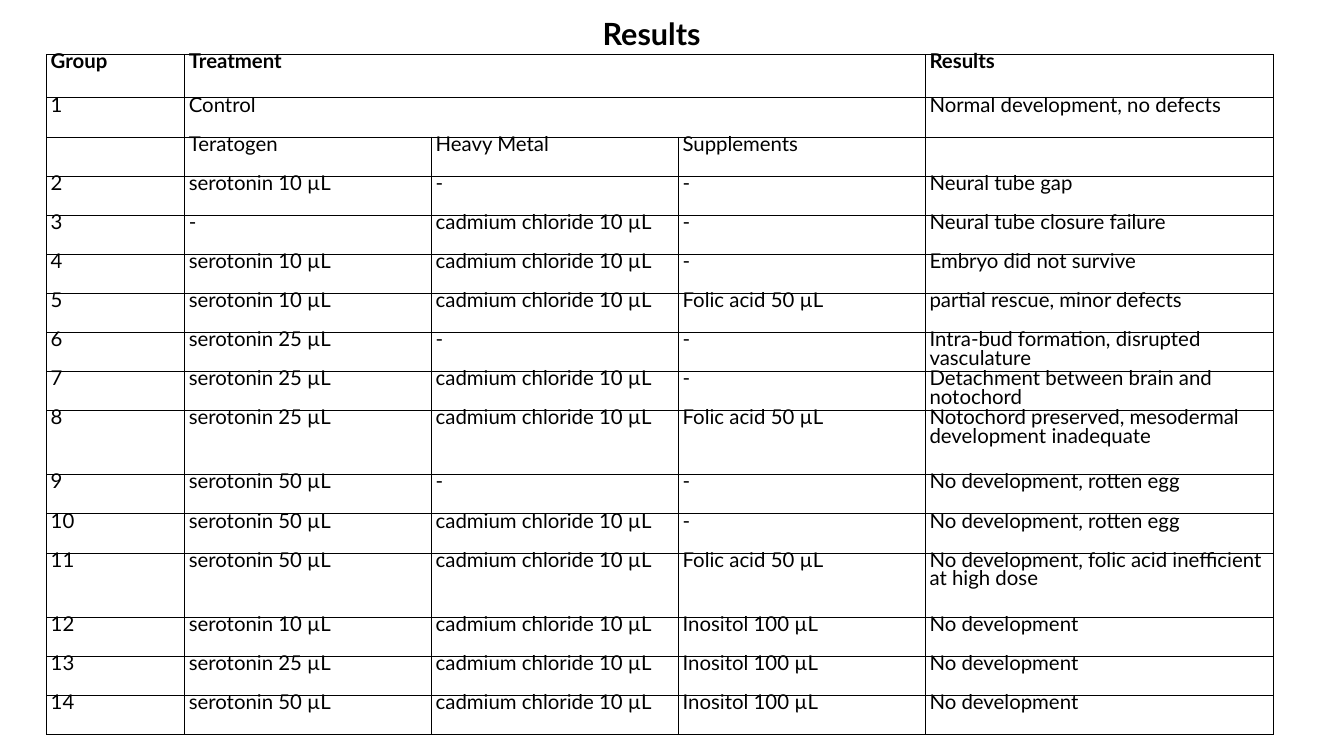
from dataclasses import dataclass

from lxml import etree
from pptx import Presentation
from pptx import util as u
from pptx.dml.color import RGBColor
from pptx.oxml import ns


@dataclass(frozen=True)
class Theme:
    font: str = "Lato"
    ink: RGBColor = RGBColor(0, 0, 0)
    paper: RGBColor = RGBColor(255, 255, 255)
    title_size: int = 36
    cell_size: int = 24
    cell_leading: float = 21.9
    border_width: int = 1


theme = Theme()


def write(frame, words, size=theme.cell_size, bold=False, leading=None):
    para = frame.paragraphs[0]
    if leading:
        para.line_spacing = u.Pt(leading)
    span = para.add_run()
    span.text = words
    span.font.name = theme.font
    span.font.size = u.Pt(size)
    span.font.bold = bold
    span.font.color.rgb = theme.ink


def outline(cell):
    """Draw a thin line on all four sides of a table cell."""
    properties = cell._tc.get_or_add_tcPr()
    for side in ("a:lnL", "a:lnR", "a:lnT", "a:lnB"):
        line = etree.SubElement(properties, ns.qn(side), w=str(u.Pt(theme.border_width)))
        fill = etree.SubElement(line, ns.qn("a:solidFill"))
        etree.SubElement(fill, ns.qn("a:srgbClr"), val=str(theme.ink))


deck = Presentation()
deck.slide_width = u.Inches(21.99)
deck.slide_height = u.Inches(12.37)
page = deck.slides.add_slide(deck.slide_layouts[6])

title = page.shapes.add_textbox(
    u.Inches(9.86), u.Inches(0.23), u.Inches(2.36), u.Inches(0.61)
).text_frame
title.word_wrap = True
title.margin_left = title.margin_right = title.margin_bottom = 0
title.margin_top = u.Inches(0.02)
write(title, "Results", size=theme.title_size, bold=True)

cadmium = "cadmium chloride 10 µL"
folic_acid = "Folic acid 50 µL"
inositol = "Inositol 100 µL"
treatments = [
    ("serotonin 10 µL", "-", "-", "Neural tube gap"),
    ("-", cadmium, "-", "Neural tube closure failure"),
    ("serotonin 10 µL", cadmium, "-", "Embryo did not survive"),
    ("serotonin 10 µL", cadmium, folic_acid, "partial rescue, minor defects"),
    ("serotonin 25 µL", "-", "-", "Intra-bud formation, disrupted vasculature"),
    ("serotonin 25 µL", cadmium, "-", "Detachment between brain and notochord"),
    ("serotonin 25 µL", cadmium, folic_acid,
     "Notochord preserved, mesodermal development inadequate"),
    ("serotonin 50 µL", "-", "-", "No development, rotten egg"),
    ("serotonin 50 µL", cadmium, "-", "No development, rotten egg"),
    ("serotonin 50 µL", cadmium, folic_acid,
     "No development, folic acid inefficient at high dose"),
    ("serotonin 10 µL", cadmium, inositol, "No development"),
    ("serotonin 25 µL", cadmium, inositol, "No development"),
    ("serotonin 50 µL", cadmium, inositol, "No development"),
]
rows = [
    ("Group", "Treatment", "", "", "Results"),
    ("1", "Control", "", "", "Normal development, no defects"),
    ("", "Teratogen", "Heavy Metal", "Supplements", ""),
]
rows += [(str(group), *treatment) for group, treatment in enumerate(treatments, start=2)]

column_widths = [2.26, 4.04, 4.04, 4.04, 5.7]
row_heights = [0.64] * len(rows)
row_heights[0] = 0.71
row_heights[9] = row_heights[12] = 1.05

table = page.shapes.add_table(
    len(rows), len(column_widths), u.Inches(0.76), u.Inches(0.89),
    u.Inches(sum(column_widths)), u.Inches(sum(row_heights)),
).table
table.first_row = table.horz_banding = False
for column, width in zip(table.columns, column_widths):
    column.width = u.Inches(width)

for r, (values, height) in enumerate(zip(rows, row_heights)):
    table.rows[r].height = u.Inches(height)
    for c, value in enumerate(values):
        cell = table.cell(r, c)
        cell.margin_left = u.Inches(0.07)
        cell.margin_right = cell.margin_top = cell.margin_bottom = 0
        outline(cell)
        cell.fill.solid()
        cell.fill.fore_color.rgb = theme.paper
        if value:
            write(cell.text_frame, value, bold=r == 0, leading=theme.cell_leading)

for r in (0, 1):
    table.cell(r, 1).merge(table.cell(r, 3))

deck.save("out.pptx")
